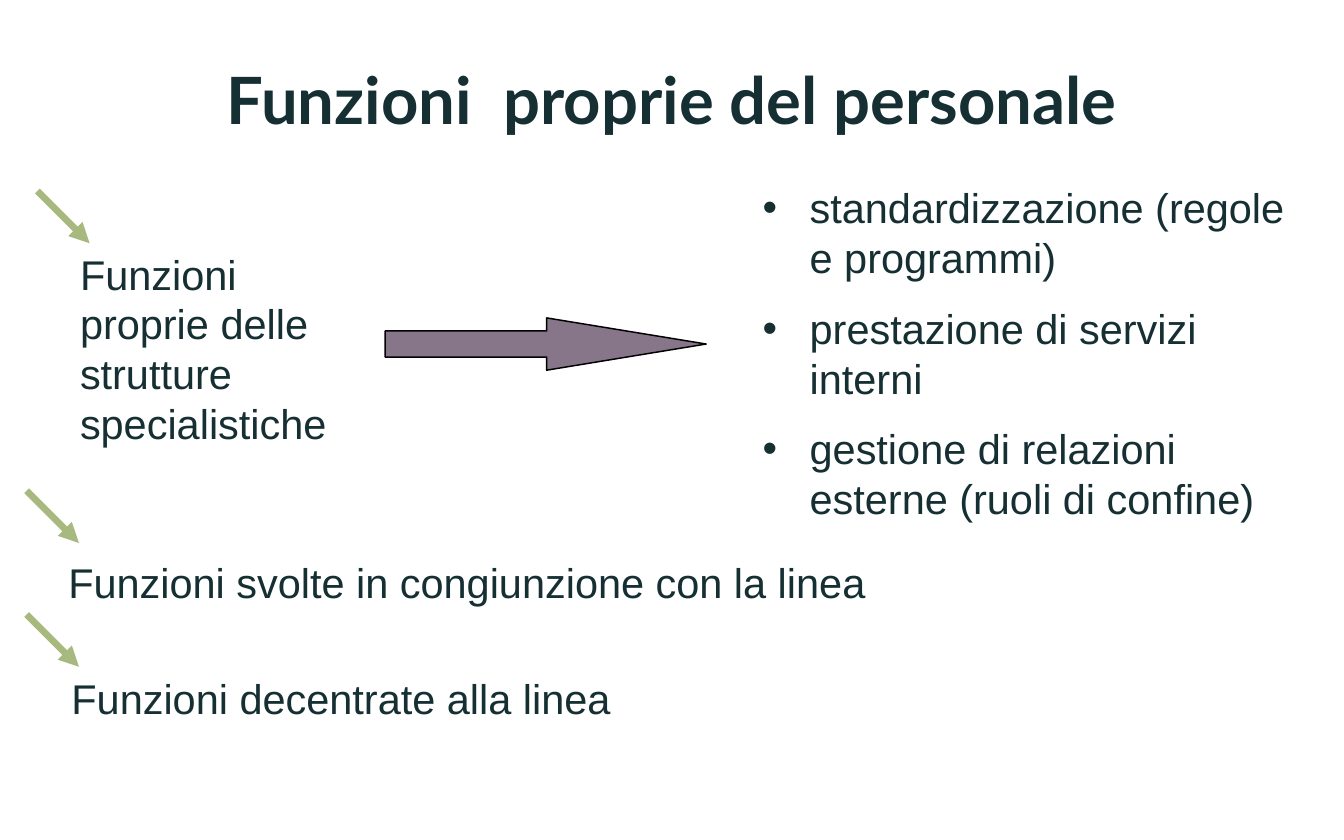
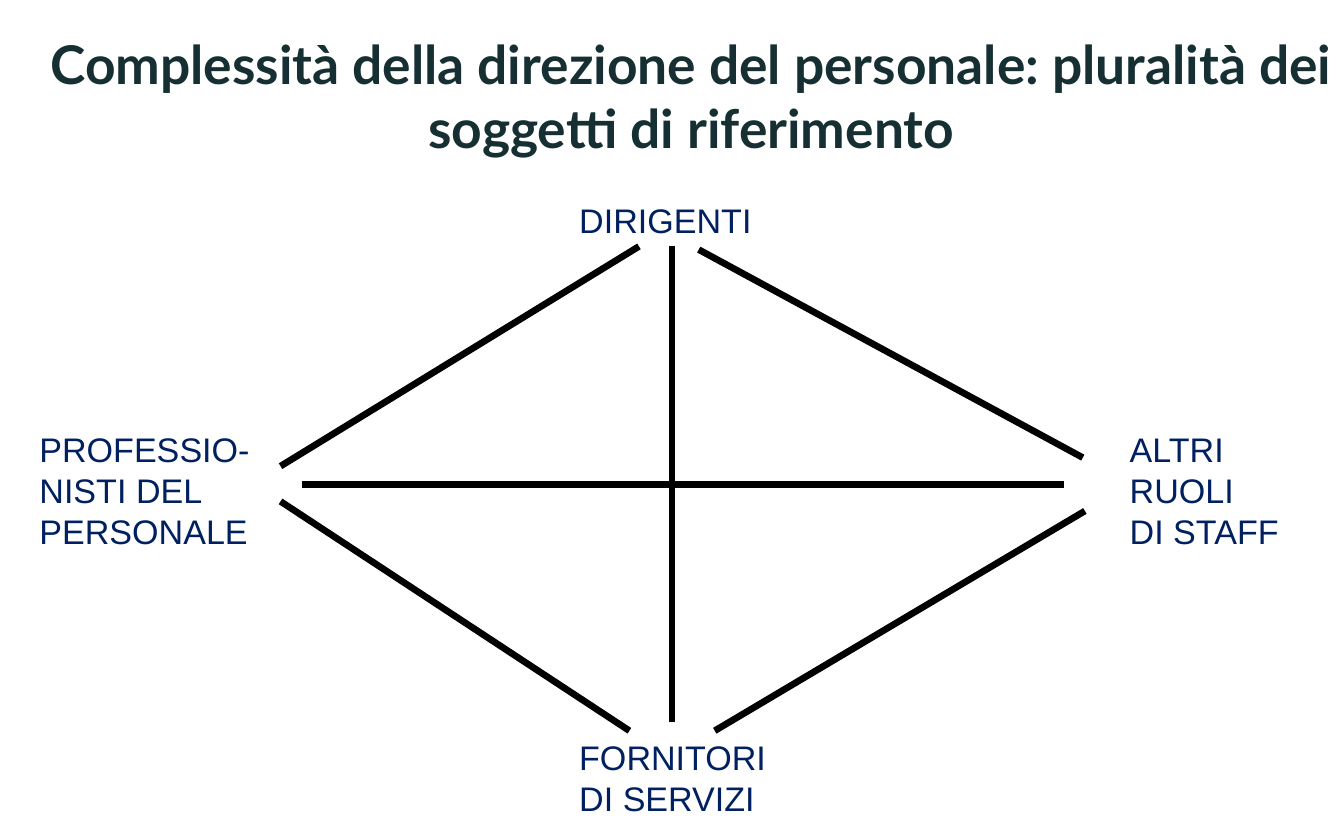
import dataclasses

import lxml.etree
import pptx
import pptx.dml.color
import pptx.enum.shapes
import pptx.enum.text
import pptx.oxml.ns
import pptx.util

Inches = pptx.util.Inches
Pt = pptx.util.Pt
qn = pptx.oxml.ns.qn


def rgb(code):
    return pptx.dml.color.RGBColor.from_string(code)


@dataclasses.dataclass(frozen=True)
class TextStyle:
    font: str
    size: int
    color: str
    bold: bool = False
    centered: bool = False
    space_before: int = 0


@dataclasses.dataclass(frozen=True)
class Theme:
    ink: str = "162F33"
    navy: str = "002060"
    black: str = "000000"
    green: str = "A8B97F"
    mauve: str = "877589"
    title_font: str = "Lato"
    body_font: str = "Arial"
    thick_line: float = 4.5
    thin_line: float = 1
    bullet_indent: float = 0.44

    def title(self, size):
        return TextStyle(self.title_font, size, self.ink, bold=True, centered=True)

    @property
    def body(self):
        return TextStyle(self.body_font, 28, self.ink, space_before=14)

    @property
    def label(self):
        return TextStyle(self.body_font, 23, self.navy)


THEME = Theme()


def add_bullet(para):
    indent = Inches(THEME.bullet_indent)
    properties = para._p.get_or_add_pPr()
    properties.set("marL", str(indent))
    properties.set("indent", str(-indent))
    lxml.etree.SubElement(properties, qn("a:buFont")).set("typeface", THEME.body_font)
    lxml.etree.SubElement(properties, qn("a:buChar")).set("char", "•")


def add_text(slide, bounds, lines, style, wrap=True, grow=True, bullets=False):
    """Add a text box with one paragraph per line; bounds are left, top, width, height."""
    box = slide.shapes.add_textbox(*map(Inches, bounds))
    frame = box.text_frame
    frame.word_wrap = wrap
    if grow:
        frame.auto_size = pptx.enum.text.MSO_AUTO_SIZE.SHAPE_TO_FIT_TEXT
    frame.margin_left = frame.margin_right = Inches(0.12)
    frame.margin_top = frame.margin_bottom = Inches(0.06)
    for index, line in enumerate(lines):
        para = frame.add_paragraph() if index else frame.paragraphs[0]
        para.text = line
        para.font.name = style.font
        para.font.size = Pt(style.size)
        para.font.bold = style.bold
        para.font.color.rgb = rgb(style.color)
        if style.centered:
            para.alignment = pptx.enum.text.PP_ALIGN.CENTER
        if index:
            para.space_before = Pt(style.space_before)
        if bullets:
            add_bullet(para)
    return box


def add_line(slide, start, end, color, arrow=False):
    line = slide.shapes.add_connector(
        pptx.enum.shapes.MSO_CONNECTOR.STRAIGHT, *map(Inches, start + end))
    line.line.color.rgb = rgb(color)
    line.line.width = Pt(THEME.thick_line)
    if arrow:
        outline = line.line._get_or_add_ln()
        lxml.etree.SubElement(outline, qn("a:tailEnd")).set("type", "triangle")
    lxml.etree.SubElement(line._element.spPr, qn("a:effectLst"))


def add_block_arrow(slide, bounds):
    arrow = slide.shapes.add_shape(
        pptx.enum.shapes.MSO_SHAPE.RIGHT_ARROW, *map(Inches, bounds))
    arrow.adjustments[0] = 0.5
    arrow.adjustments[1] = 3.05
    arrow.shadow.inherit = False
    arrow.fill.solid()
    arrow.fill.fore_color.rgb = rgb(THEME.mauve)
    arrow.line.color.rgb = rgb(THEME.black)
    arrow.line.width = Pt(THEME.thin_line)


def add_blank_slide(deck):
    return deck.slides.add_slide(deck.slide_layouts[6])


def build_functions_slide(deck):
    slide = add_blank_slide(deck)
    title = add_text(slide, (0, 0.27, 12.6, 1.31), ["Funzioni  proprie del personale"],
                     THEME.title(44), grow=False)
    title.text_frame.vertical_anchor = pptx.enum.text.MSO_ANCHOR.MIDDLE
    add_text(slide, (7.03, 1.65, 5.33, 3.62), [
        "standardizzazione (regole e programmi)",
        "prestazione di servizi interni",
        "gestione di relazioni esterne (ruoli di confine)",
    ], THEME.body, grow=False, bullets=True)
    add_text(slide, (0.63, 2.27, 2.81, 1.99),
             ["Funzioni proprie delle strutture specialistiche"], THEME.body)
    add_block_arrow(slide, (3.61, 2.98, 3.01, 0.49))
    add_text(slide, (0.52, 5.16, 9.88, 0.59),
             ["Funzioni svolte in congiunzione con la linea"], THEME.body)
    add_text(slide, (0.55, 6.25, 5.3, 0.59),
             ["Funzioni decentrate alla linea"], THEME.body, wrap=False)
    pointer_size = 0.49
    for left, top in ((0.35, 1.79), (0.25, 5.76), (0.25, 4.6)):
        add_line(slide, (left, top), (left + pointer_size, top + pointer_size),
                 THEME.green, arrow=True)


def build_stakeholders_slide(deck):
    slide = add_blank_slide(deck)
    links = (
        ((2.63, 4.37), (5.99, 2.31)),
        ((6.7, 6.85), (10.17, 4.79)),
        ((2.63, 4.7), (5.9, 6.85)),
        ((6.55, 2.34), (10.15, 4.29)),
        ((2.83, 4.54), (9.97, 4.54)),
        ((6.3, 6.77), (6.3, 2.31)),
    )
    for start, end in links:
        add_line(slide, start, end, THEME.black)
    groups = (
        ((5.31, 1.81, 1.87, 0.51), ["DIRIGENTI"]),
        ((0.25, 3.96, 2.23, 1.28), ["PROFESSIO-", "NISTI DEL", "PERSONALE"]),
        ((5.31, 6.84, 2, 0.89), ["FORNITORI", "DI SERVIZI"]),
        ((10.47, 3.96, 1.64, 1.28), ["ALTRI", "RUOLI", "DI STAFF"]),
    )
    for bounds, lines in groups:
        add_text(slide, bounds, lines, THEME.label, wrap=False)
    add_text(slide, (0.35, 0.23, 12.26, 1.32), [
        "Complessità della direzione del personale: pluralità dei soggetti di riferimento",
    ], THEME.title(36))


def main():
    deck = pptx.Presentation()
    # The page is metric: 32 by 20 centimetres.
    deck.slide_width = pptx.util.Cm(32)
    deck.slide_height = pptx.util.Cm(20)
    build_functions_slide(deck)
    build_stakeholders_slide(deck)
    deck.save("out.pptx")


if __name__ == "__main__":
    main()
